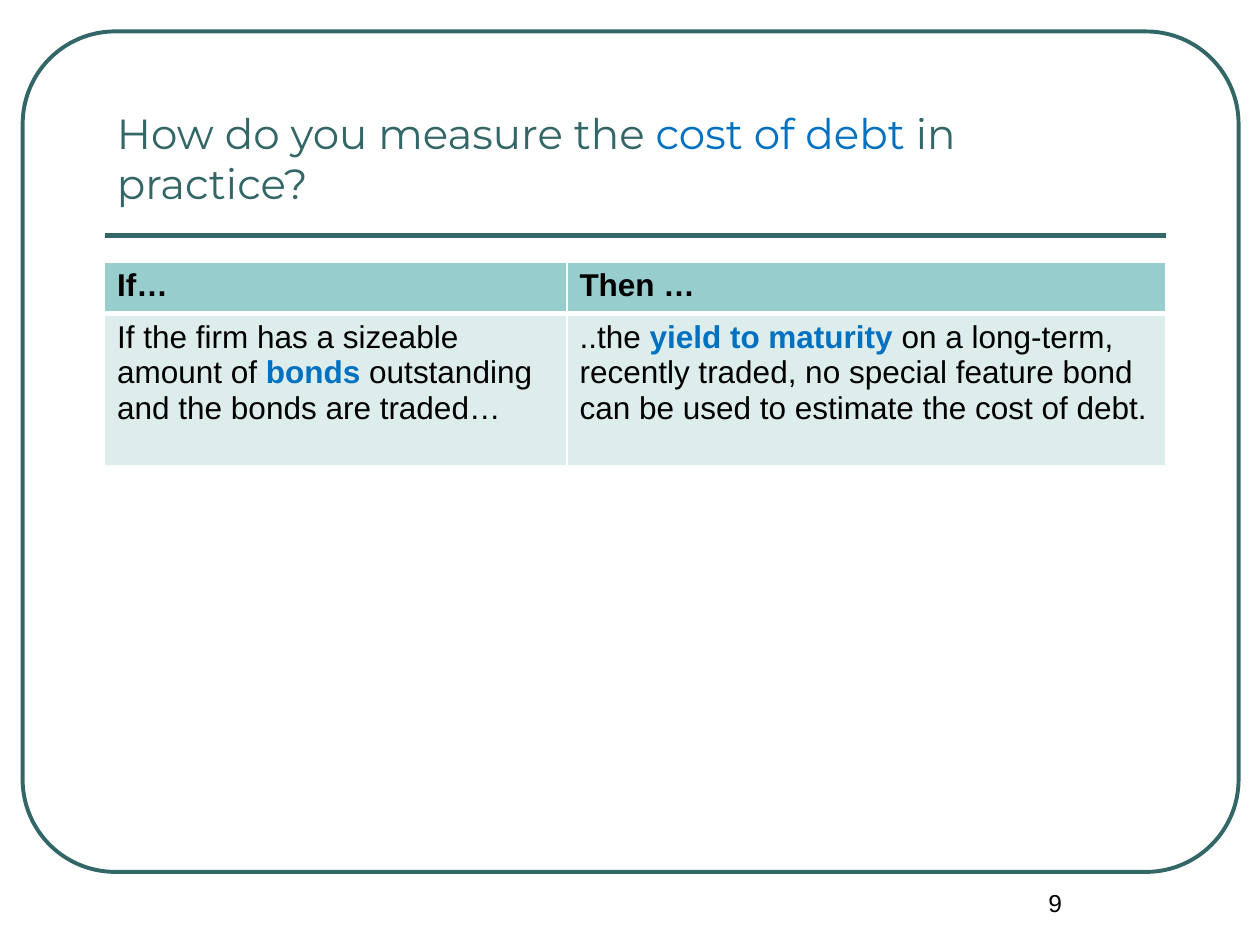
from lxml.etree import SubElement
from pptx import Presentation
from pptx.dml.color import RGBColor
from pptx.enum.shapes import MSO_CONNECTOR as Connector, MSO_SHAPE as Shape
from pptx.enum.text import MSO_ANCHOR as Anchor, PP_ALIGN as Align
from pptx.oxml.ns import qn
from pptx.util import Inches, Pt

TEAL = RGBColor(0x33, 0x66, 0x66)
BLUE = RGBColor(0x00, 0x70, 0xC0)
BLACK = RGBColor(0x00, 0x00, 0x00)
WHITE = RGBColor(0xFF, 0xFF, 0xFF)
HEADER_FILL = RGBColor(0x97, 0xCD, 0xCC)
BODY_FILL = RGBColor(0xDD, 0xED, 0xEC)

LEFT, WIDTH = 0.83, 8.42

# Each cell is a list of (text, highlighted) spans
HEADER = [[("If…", False)], [("Then …", False)]]
BODY = [
    [("If the firm has a sizeable amount of ", False), ("bonds", True),
     (" outstanding and the bonds are traded…", False)],
    [("..the ", False), ("yield to maturity", True),
     (" on a long-term, recently traded, no special feature bond "
      "can be used to estimate the cost of debt.", False)],
]


def write_spans(para, spans, font, size, color, highlight_bold=False):
    para.font.name = font
    para.font.size = Pt(size)
    para.font.color.rgb = color
    for text, highlighted in spans:
        span = para.add_run()
        span.text = text
        if highlighted:
            span.font.color.rgb = BLUE
            if highlight_bold:
                span.font.bold = True


def add_text(page, box, spans, font, size, color):
    frame = page.shapes.add_textbox(*map(Inches, box)).text_frame
    frame.word_wrap = True
    write_spans(frame.paragraphs[0], spans, font, size, color)
    return frame


def add_frame(page, box):
    frame = page.shapes.add_shape(Shape.ROUNDED_RECTANGLE, *map(Inches, box))
    frame.adjustments[0] = 0.11
    frame.shadow.inherit = False
    frame.fill.background()
    frame.line.color.rgb = TEAL
    frame.line.width = Pt(2.25)


def add_title(page, box, rule_y):
    left, _, width, _ = box
    rule = page.shapes.add_connector(
        Connector.STRAIGHT, *map(Inches, (left, rule_y, left + width, rule_y)))
    rule.line.color.rgb = TEAL
    rule.line.width = Pt(3)
    SubElement(rule._element.spPr, qn("a:effectLst"))

    spans = [("How do you measure the ", False), ("cost of debt ", True),
             ("in practice?", False)]
    frame = add_text(page, box, spans, "Montserrat", 24, TEAL)
    frame.vertical_anchor = Anchor.MIDDLE


def set_borders(cell, widths):
    """Draw white cell borders; widths maps L, R, T and B to points."""
    properties = cell._tc.get_or_add_tcPr()
    for position, (side, width) in enumerate(widths.items()):
        line = properties.makeelement(qn(f"a:ln{side}"), {"w": str(Pt(width))})
        fill = SubElement(line, qn("a:solidFill"))
        SubElement(fill, qn("a:srgbClr"), val=str(WHITE))
        properties.insert(position, line)


def add_condition_table(page, box, column_widths, row_heights):
    table = page.shapes.add_table(2, 2, *map(Inches, box)).table
    for column, width in zip(table.columns, column_widths):
        column.width = Inches(width)
    for row, height in zip(table.rows, row_heights):
        row.height = Inches(height)

    # The heavy rule between the rows is shared by both of them
    styles = [(HEADER, HEADER_FILL, True, {"L": 1, "R": 1, "T": 1, "B": 3}),
              (BODY, BODY_FILL, False, {"L": 1, "R": 1, "T": 3, "B": 1})]
    for row, (texts, fill, bold, borders) in zip(table.rows, styles):
        for cell, spans in zip(row.cells, texts):
            cell.fill.solid()
            cell.fill.fore_color.rgb = fill
            set_borders(cell, borders)
            para = cell.text_frame.paragraphs[0]
            para.font.bold = bold
            write_spans(para, spans, "Arial", 18, BLACK, highlight_bold=True)


def add_page_number(page, box):
    frame = add_text(page, box, [("9", False)], "Arial", 14, BLACK)
    frame.paragraphs[0].alignment = Align.CENTER


def main():
    deck = Presentation()
    deck.slide_width, deck.slide_height = Inches(10), Inches(7.5)
    page = deck.slides.add_slide(deck.slide_layouts[6])

    add_frame(page, (0.18, 0.25, 9.65, 6.67))
    add_title(page, (LEFT, 0.75, WIDTH, 1), rule_y=1.87)
    add_condition_table(page, (LEFT, 2.08, WIDTH, 1.62), (3.67, 4.75), (0.41, 1.21))
    add_page_number(page, (7.5, 7, 1.75, 0.5))

    deck.save("out.pptx")


if __name__ == "__main__":
    main()
